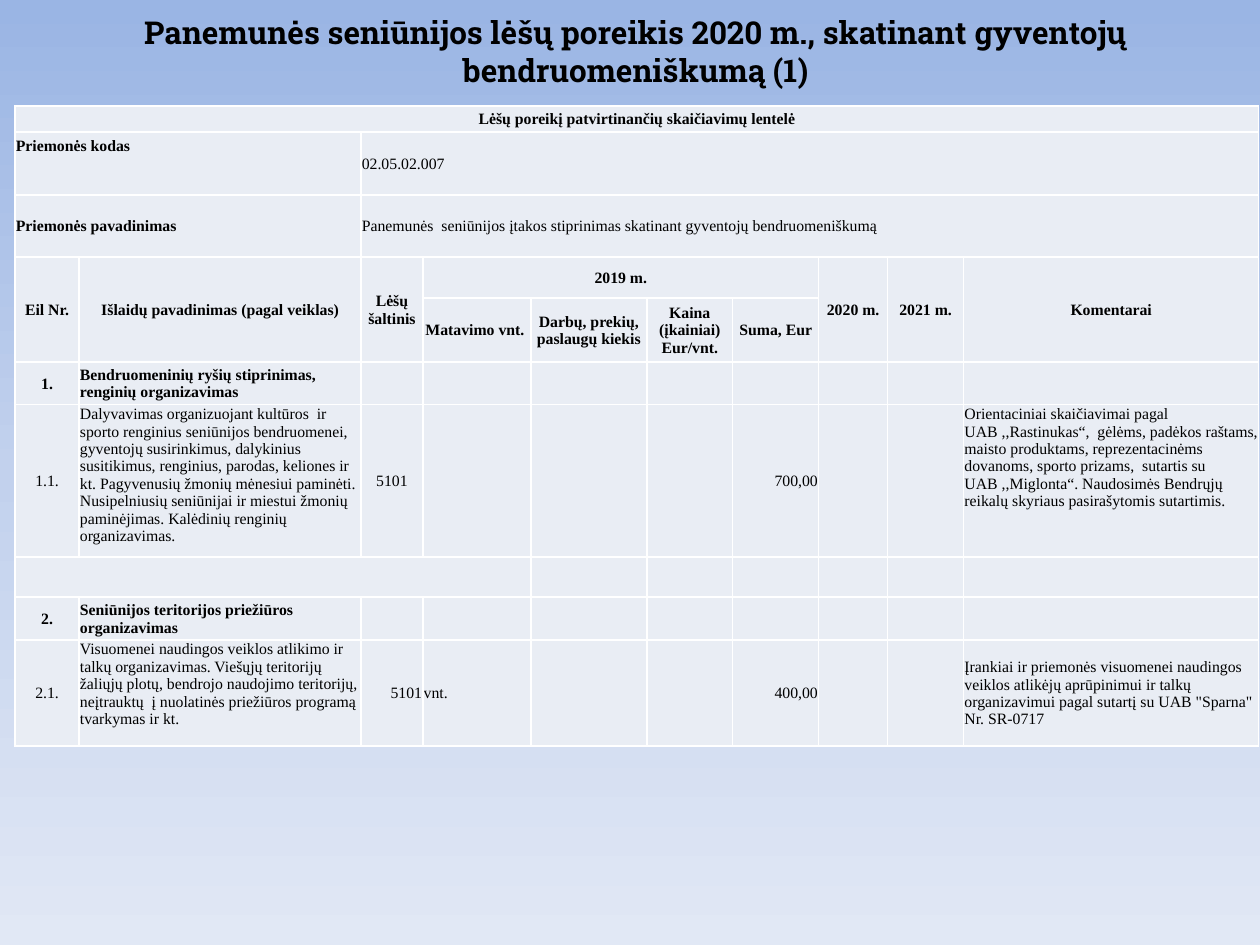
"""Builds the slide with the 2020 funding table of the Panemunė eldership."""
from copy import deepcopy
from pptx import Presentation
from pptx.dml.color import RGBColor
from pptx.enum import text as t
from pptx.oxml.ns import qn
from pptx.util import Pt

HUES = {"top": "9AB5E4", "mid": "C2D1ED", "low": "E1E8F5", "cell": "E9EDF4", "ink": "000000"}
SKY = [(0, "top"), (0.5, "mid"), (1, "low")]
TITLE = "Panemunės seniūnijos lėšų poreikis 2020 m., skatinant gyventojų bendruomeniškumą (1)"
COLS = [36.6, 161.1, 35.4, 61.7, 66.3, 49.1, 49.1, 39.4, 43.5, 168.6]
ROWS = [15, 36, 35.4, 23.4, 36.6, 24.4, 85, 22.9, 24.4, 60.8]
SPANS = [(0, 0, 0, 9), (1, 0, 1, 1), (1, 2, 1, 9), (2, 0, 2, 1), (2, 2, 2, 9),
         (3, 0, 4, 0), (3, 1, 4, 1), (3, 2, 4, 2), (3, 3, 3, 6),
         (3, 7, 4, 7), (3, 8, 4, 8), (3, 9, 4, 9), (7, 0, 7, 3)]
BOLD = {0, 3, 4, 5, 8}
HIGH = {(1, 0), (6, 1), (6, 9), (9, 1)}
ALIGN = {"l": t.PP_ALIGN.LEFT, "c": t.PP_ALIGN.CENTER, "r": t.PP_ALIGN.RIGHT}
CELLS = [
    {0: ("c", "Lėšų poreikį patvirtinančių skaičiavimų lentelė")},
    {0: ("l", "Priemonės kodas"), 2: ("l", "02.05.02.007")},
    {0: ("l", "Priemonės pavadinimas"),
     2: ("l", "Panemunės  seniūnijos įtakos stiprinimas skatinant gyventojų bendruomeniškumą")},
    {0: ("c", "Eil Nr."), 1: ("c", "Išlaidų pavadinimas (pagal veiklas)"),
     2: ("c", "Lėšų šaltinis"), 3: ("c", "2019 m."), 7: ("c", "2020 m."),
     8: ("c", "2021 m."), 9: ("c", "Komentarai")},
    {3: ("c", "Matavimo vnt. "), 4: ("c", "Darbų, prekių, paslaugų kiekis"),
     5: ("c", "Kaina (įkainiai) Eur/vnt."), 6: ("c", "Suma, Eur")},
    {0: ("c", "1."), 1: ("l", "Bendruomeninių ryšių stiprinimas, renginių organizavimas")},
    {0: ("c", "1.1."),
     1: ("l", "Dalyvavimas organizuojant kultūros  ir sporto renginius seniūnijos "
         "bendruomenei,  gyventojų susirinkimus, dalykinius susitikimus, renginius, parodas, "
         "keliones ir kt. Pagyvenusių žmonių mėnesiui paminėti. Nusipelniusių seniūnijai ir "
         "miestui žmonių paminėjimas. Kalėdinių renginių organizavimas."),
     2: ("c", "5101"), 6: ("r", "700,00"),
     9: ("l", "Orientaciniai skaičiavimai pagal  UAB ,,Rastinukas“,  gėlėms, padėkos "
         "raštams, maisto produktams, reprezentacinėms dovanoms, sporto prizams,  sutartis "
         "su UAB ,,Miglonta“. Naudosimės Bendrųjų reikalų skyriaus pasirašytomis sutartimis.")},
    {},
    {0: ("c", "2."), 1: ("l", "Seniūnijos teritorijos priežiūros organizavimas")},
    {0: ("c", "2.1."),
     1: ("l", "Visuomenei naudingos veiklos atlikimo ir talkų organizavimas. Viešųjų "
         "teritorijų žaliųjų plotų, bendrojo naudojimo teritorijų, neįtrauktų  į nuolatinės "
         "priežiūros programą tvarkymas ir kt."),
     2: ("r", "5101"), 3: ("l", "vnt."), 6: ("r", "400,00"),
     9: ("l", "Įrankiai ir priemonės visuomenei naudingos veiklos atlikėjų aprūpinimui ir "
         "talkų organizavimui pagal sutartį su UAB \"Sparna\" Nr. SR-0717")},
]


def hue(key):
    return RGBColor.from_string(HUES[key])


def write(para, words, face, size, bold, side):
    para.text = words
    para.alignment = ALIGN[side]
    font = para.font
    font.name, font.size, font.bold = face, Pt(size), bold
    font.color.rgb = hue("ink")


def paint(slide):
    fill = slide.background.fill
    fill.gradient()
    fill.gradient_angle = 270
    stops = next(slide.element.iter(qn("a:gsLst")))
    stops.append(deepcopy(stops[0]))
    for stop, (place, key) in zip(fill.gradient_stops, SKY):
        stop.position = place
        stop.color.rgb = hue(key)


def head(slide):
    frame = slide.shapes.add_textbox(Pt(14.4), Pt(3.6), Pt(697.7), Pt(51.1)).text_frame
    frame.word_wrap = True
    frame.vertical_anchor = t.MSO_ANCHOR.MIDDLE
    write(frame.paragraphs[0], TITLE, "Roboto Slab", 18, True, "c")


def grid(slide):
    table = slide.shapes.add_table(len(ROWS), len(COLS), Pt(8.6), Pt(60.5),
                                   Pt(sum(COLS)), Pt(sum(ROWS))).table
    table.first_row = table.horz_banding = False
    for col, width in zip(table.columns, COLS):
        col.width = Pt(width)
    for row, height in zip(table.rows, ROWS):
        row.height = Pt(height)
    for top, left, low, right in SPANS:
        table.cell(top, left).merge(table.cell(low, right))
    for r, row in enumerate(CELLS):
        for c in range(len(COLS)):
            cell = table.cell(r, c)
            cell.fill.solid()
            cell.fill.fore_color.rgb = hue("cell")
            cell.margin_left = cell.margin_right = cell.margin_top = Pt(0.5)
            cell.margin_bottom = 0
            cell.vertical_anchor = t.MSO_ANCHOR.TOP if (r, c) in HIGH else t.MSO_ANCHOR.MIDDLE
            if c in row:
                side, words = row[c]
                bold = r in BOLD or (r in (1, 2) and c == 0)
                write(cell.text_frame.paragraphs[0], words, "Times New Roman", 9, bold, side)
    table.cell(1, 0).margin_top = Pt(3)


def main():
    deck = Presentation()
    deck.slide_width, deck.slide_height = Pt(720), Pt(540)
    slide = deck.slides.add_slide(deck.slide_layouts[6])
    paint(slide)
    head(slide)
    grid(slide)
    deck.save("out.pptx")


if __name__ == "__main__":
    main()
